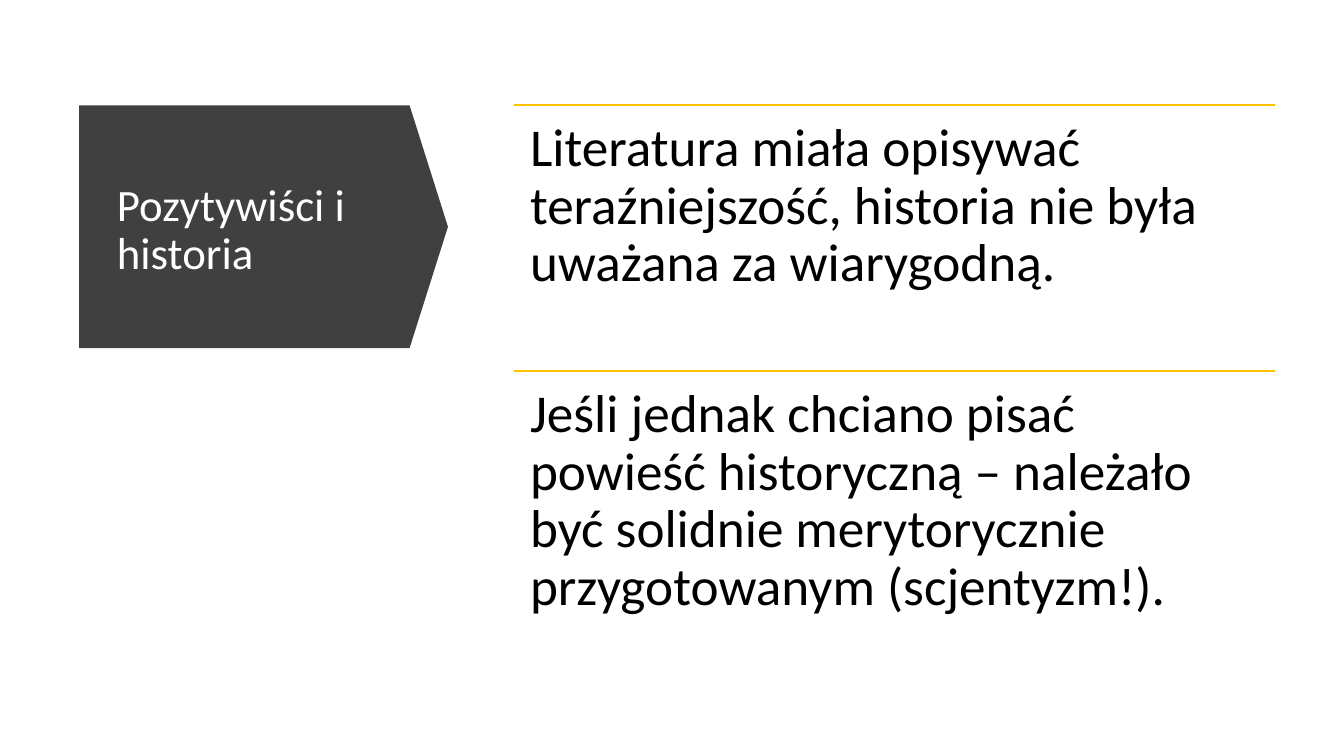
from dataclasses import dataclass

from lxml.etree import SubElement
from pptx import Presentation
from pptx.dml.color import RGBColor
from pptx.enum.shapes import MSO_CONNECTOR, MSO_SHAPE
from pptx.enum.text import MSO_ANCHOR, MSO_AUTO_SIZE, PP_ALIGN
from pptx.oxml.ns import qn
from pptx.slide import Slide
from pptx.text.text import TextFrame
from pptx.util import Pt

STATEMENT_LEFT, STATEMENT_WIDTH = 367.2, 543.6
STATEMENT_TOP, STATEMENT_HEIGHT = 74.9, 190.1


@dataclass
class Statement:
    text: str
    top: float


def colour(code: str) -> RGBColor:
    return RGBColor.from_string(code)


def write(frame: TextFrame, text: str, size: float, code: str) -> None:
    frame.text = text
    frame.word_wrap = True
    frame.auto_size = MSO_AUTO_SIZE.NONE
    paragraph = frame.paragraphs[0]
    paragraph.alignment = PP_ALIGN.LEFT
    paragraph.line_spacing = 0.9
    paragraph.font.name = "Calibri"
    paragraph.font.size = Pt(size)
    paragraph.font.color.rgb = colour(code)


def draw_heading(slide: Slide, text: str) -> None:
    heading = slide.shapes.title
    heading.left, heading.top = Pt(76.3), Pt(95)
    heading.width, heading.height = Pt(210.2), Pt(140.4)
    write(heading.text_frame, text, 32, "FFFFFF")
    heading.text_frame.vertical_anchor = MSO_ANCHOR.MIDDLE

    arrow = slide.shapes.add_shape(
        MSO_SHAPE.DOWN_ARROW, Pt(101.5), Pt(30.2), Pt(173.5), Pt(263.5))
    arrow.rotation = 270
    arrow.adjustments[0] = 1
    arrow.adjustments[1] = 0.158
    arrow.shadow.inherit = False
    arrow.fill.solid()
    arrow.fill.fore_color.rgb = colour("404040")
    arrow.line.fill.background()
    heading.element.addprevious(arrow.element)


def draw_statement(slide: Slide, statement: Statement) -> None:
    left, top = Pt(STATEMENT_LEFT), Pt(statement.top)
    rule = slide.shapes.add_connector(
        MSO_CONNECTOR.STRAIGHT, left, top, left + Pt(STATEMENT_WIDTH), top)
    rule.line.color.rgb = colour("FFC000")
    rule.line.width = Pt(1)
    SubElement(rule.element.spPr, qn("a:effectLst"))

    body = slide.shapes.add_textbox(
        left, top, Pt(STATEMENT_WIDTH), Pt(STATEMENT_HEIGHT)).text_frame
    write(body, statement.text, 38, "000000")
    body.margin_left = body.margin_right = Pt(11.4)
    body.margin_top = body.margin_bottom = Pt(11.4)


def main() -> None:
    presentation = Presentation()
    presentation.slide_width, presentation.slide_height = Pt(960), Pt(540)
    slide = presentation.slides.add_slide(presentation.slide_layouts[5])
    draw_heading(slide, "Pozytywiści i historia")
    texts = [
        "Literatura miała opisywać teraźniejszość, historia nie była "
        "uważana za wiarygodną.",
        "Jeśli jednak chciano pisać powieść historyczną – należało być "
        "solidnie merytorycznie przygotowanym (scjentyzm!).",
    ]
    for row, text in enumerate(texts):
        draw_statement(slide, Statement(text, STATEMENT_TOP + row * STATEMENT_HEIGHT))
    presentation.save("out.pptx")


if __name__ == "__main__":
    main()
